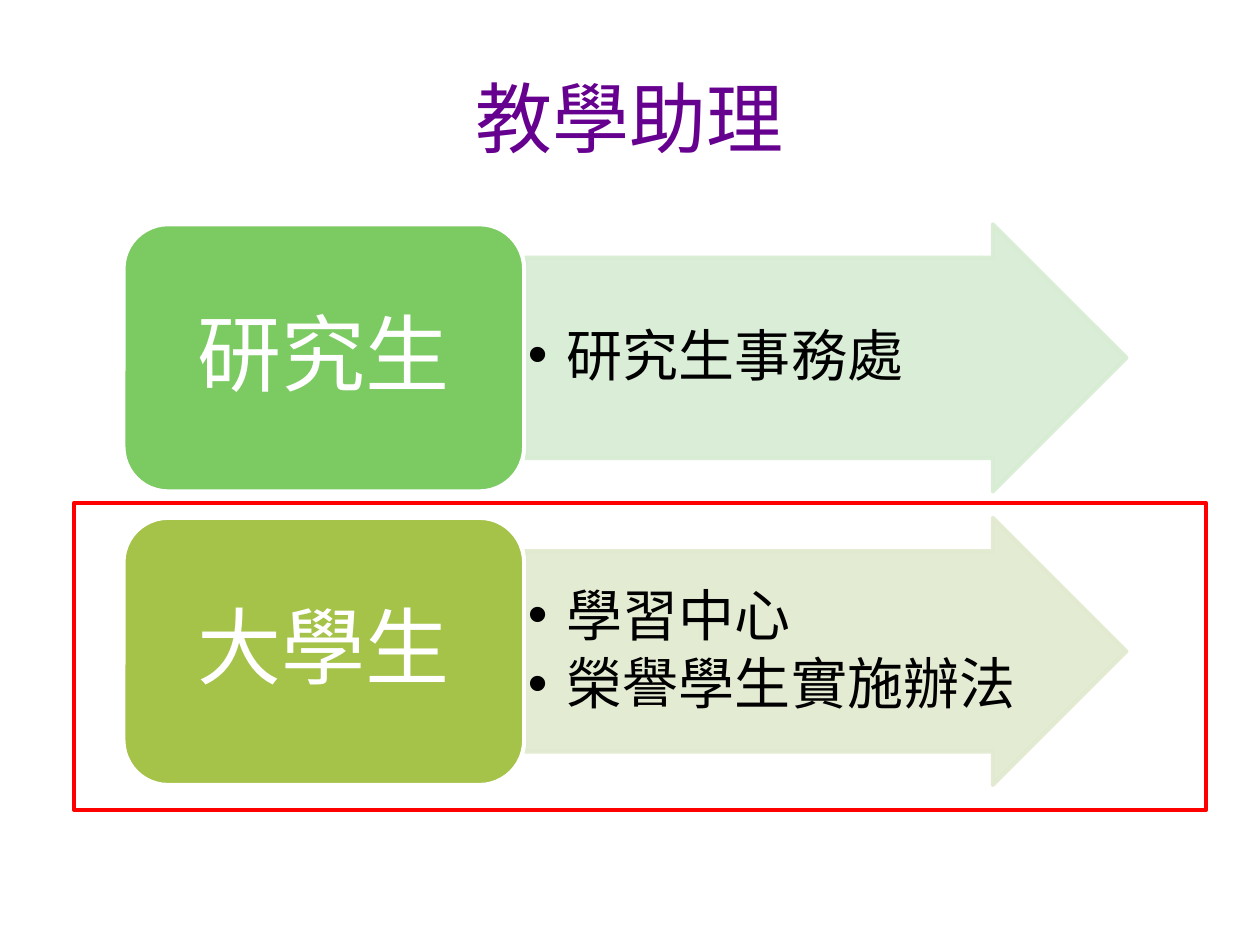
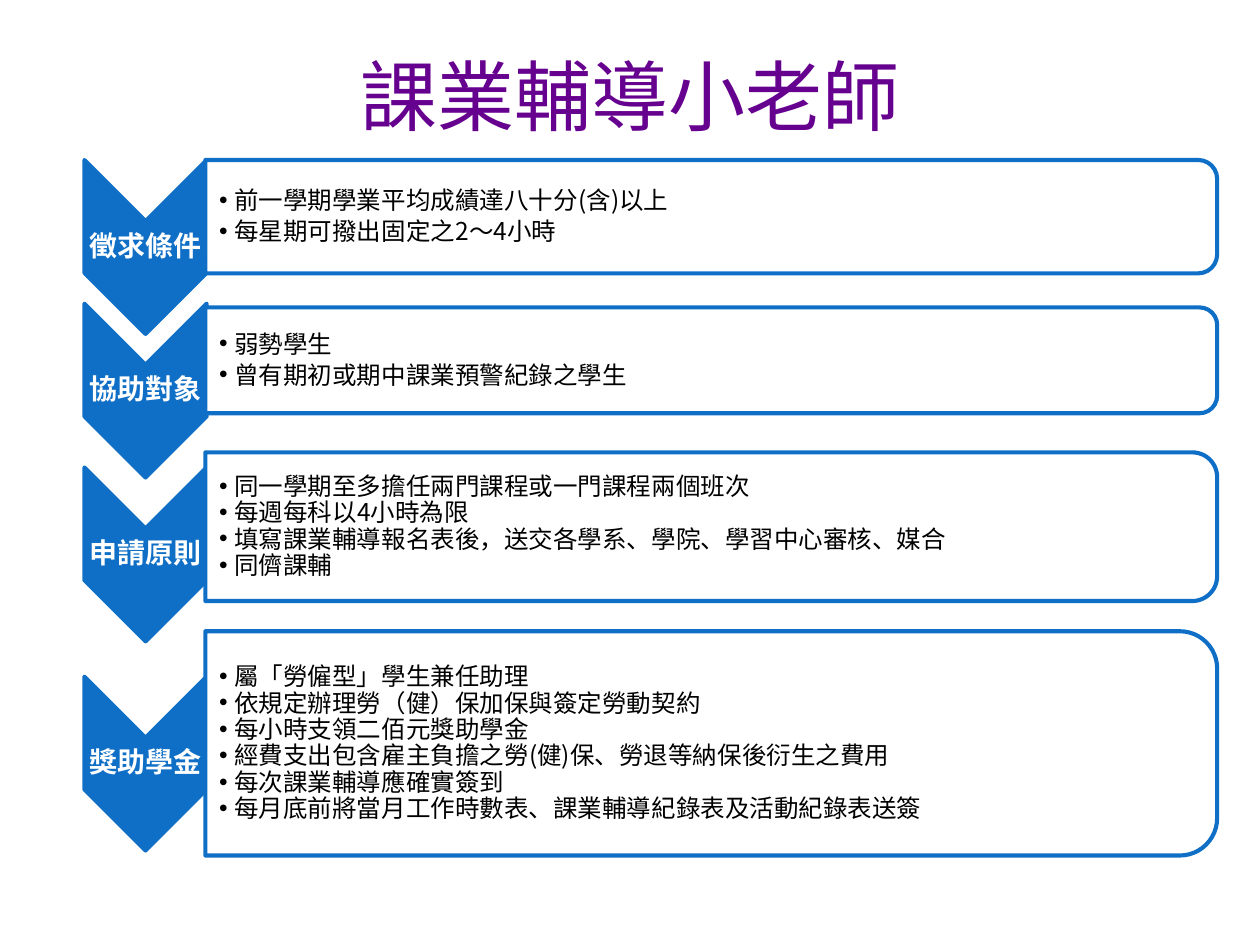
from lxml import etree
from pptx import Presentation
from pptx.dml.color import RGBColor
from pptx.enum import shapes, text
from pptx.oxml.ns import qn
from pptx.util import Inches, Pt

# Shared style
SANS, SANS_JP = "Noto Sans CJK SC", "Noto Sans CJK JP"
PURPLE, BLUE, WHITE, BLACK, RED = "66008F", "0F6FC6", "FFFFFF", "000000", "FF0000"
LINE_W = 2.36
SHAPE, ALIGN = shapes.MSO_SHAPE, text.PP_ALIGN

# Content: label, label colour, arrow colour, offices
ASSISTANT_TITLE = "教學助理"
ASSISTANTS = [
    ("研究生", "7CCA62", "D7ECD3", ["研究生事務處"]),
    ("大學生", "A5C249", "E1E9CF", ["學習中心", "榮譽學生實施辦法"]),
]

# Content: label, chevron centre, panel centre, panel height, space after, rules
TUTOR_TITLE = "課業輔導小老師"
TUTOR_RULES = [
    ("徵求條件", 1.96, 1.72, 0.9, 2.5,
     ["前一學期學業平均成績達八十分(含)以上",
      "每星期可撥出固定之2～4小時"]),
    ("協助對象", 3.1, 2.86, 0.84, 2.5,
     ["弱勢學生",
      "曾有期初或期中課業預警紀錄之學生"]),
    ("申請原則", 4.4, 4.18, 1.18, 0,
     ["同一學期至多擔任兩門課程或一門課程兩個班次",
      "每週每科以4小時為限",
      "填寫課業輔導報名表後，送交各學系、學院、學習中心審核、媒合",
      "同儕課輔"]),
    ("獎助學金", 6.06, 5.9, 1.78, 0,
     ["屬「勞僱型」學生兼任助理",
      "依規定辦理勞（健）保加保與簽定勞動契約",
      "每小時支領二佰元獎助學金",
      "經費支出包含雇主負擔之勞(健)保、勞退等納保後衍生之費用",
      "每次課業輔導應確實簽到",
      "每月底前將當月工作時數表、課業輔導紀錄表及活動紀錄表送簽"]),
]


def rgb(value):
    return RGBColor.from_string(value)


def add_text(sp, lines, size, color, font=SANS, bold=False, align=ALIGN.CENTER,
             spacing=0.9, after=0, indent=None, insets=(0.1, 0.05, 0.1, 0.05)):
    """Write one paragraph per line; an indent makes them bulleted."""
    tf = sp.text_frame
    tf.word_wrap = True
    tf.vertical_anchor = text.MSO_ANCHOR.MIDDLE
    tf.margin_left, tf.margin_top, tf.margin_right, tf.margin_bottom = map(Inches, insets)
    for i, line in enumerate(lines):
        p = tf.add_paragraph() if i else tf.paragraphs[0]
        p.alignment, p.line_spacing, p.space_after = align, spacing, Pt(after)
        if indent:
            pPr = p._p.get_or_add_pPr()
            pPr.set("marL", str(Inches(indent)))
            pPr.set("indent", str(-Inches(indent)))
            etree.SubElement(pPr, qn("a:buFont")).set("typeface", "Arial")
            etree.SubElement(pPr, qn("a:buChar")).set("char", "•")
        r = p.add_run()
        r.text = line
        r.font.size, r.font.bold, r.font.name = Pt(size), bold, font
        r.font.color.rgb = rgb(color)
        etree.SubElement(r._r.get_or_add_rPr(), qn("a:ea")).set("typeface", font)


def add_bullets(sp, lines, size, indent, **fmt):
    add_text(sp, lines, size, BLACK, indent=indent, align=ALIGN.LEFT,
             spacing=Pt(round(size * 1.08, 1)), **fmt)


def add_box(slide, x, y, w, h):
    return slide.shapes.add_textbox(*map(Inches, (x, y, w, h)))


def add_shape(slide, kind, x, y, w, h, fill, line, opacity=100):
    sp = slide.shapes.add_shape(kind, *map(Inches, (x, y, w, h)))
    sp.shadow.inherit = False
    if fill:
        sp.fill.solid()
        sp.fill.fore_color.rgb = rgb(fill)
    else:
        sp.fill.background()
    sp.line.color.rgb = rgb(line)
    sp.line.width = Pt(LINE_W)
    if opacity < 100:
        for clr in sp._element.spPr.iter(qn("a:srgbClr")):
            etree.SubElement(clr, qn("a:alpha")).set("val", str(opacity * 1000))
    return sp


def add_turned(slide, kind, cx, cy, w, h, fill, line):
    """Place a shape turned a quarter, seen as w by h around its centre."""
    sp = add_shape(slide, kind, cx - h / 2, cy - w / 2, h, w, fill, line)
    sp.rotation = 90


def add_slide(prs, title, top):
    slide = prs.slides.add_slide(prs.slide_layouts[6])
    add_text(add_box(slide, 0.5, top, 9, 1.25), [title], 44, PURPLE, spacing=1.0)
    return slide


def build_assistants(prs):
    slide = add_slide(prs, ASSISTANT_TITLE, 0.3)
    left, top, label_w, arrow_w, row_h, pitch = 0.98, 1.78, 3.18, 4.77, 2.12, 2.33
    for i, (label, color, tint, offices) in enumerate(ASSISTANTS):
        y = top + i * pitch
        # Arrow with the offices in charge
        arrow = add_shape(slide, SHAPE.RIGHT_ARROW, left + label_w + 0.01, y,
                          arrow_w, row_h, tint, tint, opacity=90)
        arrow.adjustments[0] = 0.75
        add_bullets(arrow, offices, 32, 0.31, after=4.8, insets=[0.02] * 4)
        # Kind of student
        box = add_shape(slide, SHAPE.ROUNDED_RECTANGLE, left, y, label_w, row_h,
                        color, WHITE)
        add_text(box, [label], 48, WHITE, insets=(0.2, 0.1, 0.2, 0.1))
    # Frame around the undergraduate row
    add_shape(slide, SHAPE.RECTANGLE, 0.59, 3.99, 8.98, 2.44, None, RED)


def build_tutor_rules(prs):
    slide = add_slide(prs, TUTOR_TITLE, 0.13)
    left, chev_w, chev_h, panel_w, label_h = 0.67, 0.97, 1.38, 8.03, 0.41
    panel_x = left + chev_w - 0.01
    for label, chev_y, panel_y, panel_h, after, rules in TUTOR_RULES:
        # Chevron pointing down, with its label
        add_turned(slide, SHAPE.CHEVRON, left + chev_w / 2, chev_y, chev_w, chev_h,
                   BLUE, BLUE)
        add_text(add_box(slide, left, chev_y - label_h / 2, chev_w, label_h), [label],
                 16, WHITE, bold=True, insets=[0.01] * 4)
        # Panel rounded on the right, with its rules
        add_turned(slide, SHAPE.ROUND_2_SAME_RECTANGLE, panel_x + panel_w / 2, panel_y,
                   panel_w, panel_h, WHITE, BLUE)
        add_bullets(add_box(slide, panel_x, panel_y - panel_h / 2, panel_w, panel_h),
                    rules, 14, 0.12, font=SANS_JP, after=after,
                    insets=(0.11, 0.01, 0.01, 0.01))


def main():
    prs = Presentation()
    prs.slide_width, prs.slide_height = Inches(10), Inches(7.5)
    build_assistants(prs)
    build_tutor_rules(prs)
    prs.save("out.pptx")


if __name__ == "__main__":
    main()
